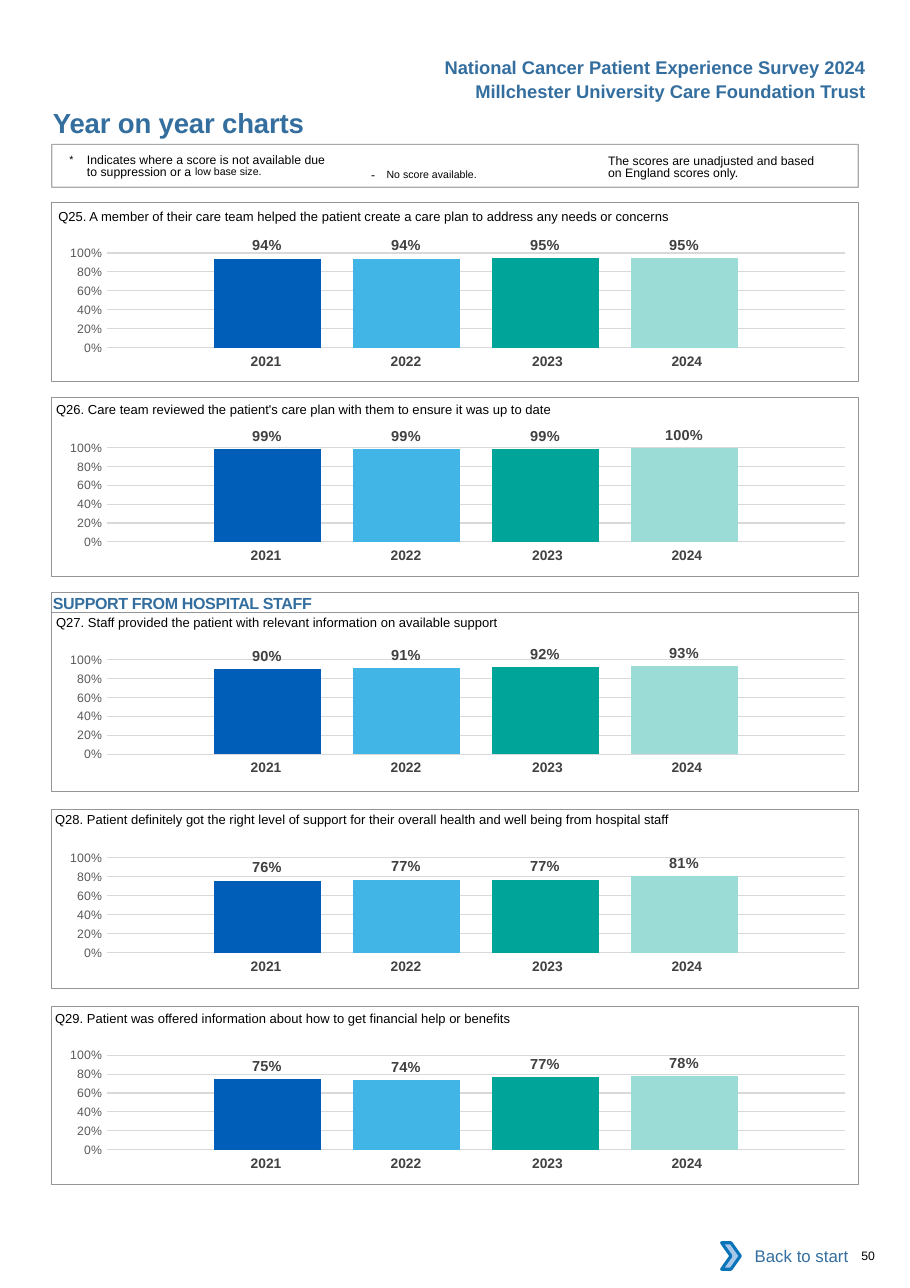
from dataclasses import dataclass

import pptx
import pptx.chart.data
import pptx.dml.color
import pptx.enum.chart
import pptx.enum.shapes
import pptx.enum.text
import pptx.util
from lxml import etree
from pptx.oxml import parse_xml
from pptx.oxml.ns import nsdecls, qn
from pptx.util import Inches

ALIGN = pptx.enum.text.PP_ALIGN
ANCHOR = pptx.enum.text.MSO_ANCHOR
SHAPE = pptx.enum.shapes.MSO_SHAPE


@dataclass(frozen=True)
class Theme:
    font: str = "Arial"
    chart_font: str = "Calibri"
    blue: str = "336E9F"
    black: str = "000000"
    white: str = "FFFFFF"
    border: str = "939598"
    grid: str = "D9D9D9"
    axis: str = "595959"
    label: str = "404040"
    year: str = "414042"
    chevron_fill: str = "A8C7E9"
    chevron_line: str = "0A74BB"
    bars: tuple = ("005EB8", "41B6E6", "00A499", "9CDCD7")
    title_size: float = 18
    header_size: float = 12
    section_size: float = 10.5
    question_size: float = 8.5
    note_size: float = 8
    raised_size: float = 12
    axis_size: float = 8
    label_size: float = 9.5
    year_size: float = 9
    link_size: float = 11


T = Theme()
YEARS = ("2021", "2022", "2023", "2024")
PANEL_LEFT, PANEL_WIDTH, PANEL_HEIGHT = 0.47, 7.32, 1.62

# Question, its left and top, panel top, chart top, yearly scores
QUESTIONS = [
    ("Q25. A member of their care team helped the patient create a care plan "
     "to address any needs or concerns",
     0.53, 1.8, 1.84, 2.11, (0.94, 0.94, 0.95, 0.95)),
    ("Q26. Care team reviewed the patient's care plan with them to ensure it was up to date",
     0.51, 3.55, 3.61, 3.87, (0.99, 0.99, 0.99, 1)),
    ("Q27. Staff provided the patient with relevant information on available support",
     0.51, 5.49, 5.56, 5.8, (0.9, 0.91, 0.92, 0.93)),
    ("Q28. Patient definitely got the right level of support for their overall health "
     "and well being from hospital staff",
     0.5, 7.28, 7.35, 7.6, (0.76, 0.77, 0.77, 0.81)),
    ("Q29. Patient was offered information about how to get financial help or benefits",
     0.5, 9.08, 9.13, 9.39, (0.75, 0.74, 0.77, 0.78)),
]


def rgb(value):
    return pptx.dml.color.RGBColor.from_string(value)


def style_font(font, size, color, bold=False, name=T.font):
    font.name, font.size, font.bold = name, pptx.util.Pt(size), bold
    font.color.rgb = rgb(color)


def add_run(p, text, size, color=T.black, bold=False, spacing=0, raised=0):
    r = p.add_run()
    r.text = text
    style_font(r.font, size, color, bold)
    if spacing:
        r.font._element.set("spc", str(round(spacing * 100)))
    if raised:
        r.font._element.set("baseline", str(raised * 1000))


def set_frame(tf, insets=(0, 0, 0, 0), align=ALIGN.LEFT, anchor=ANCHOR.TOP):
    tf.word_wrap = True
    tf.auto_size = pptx.enum.text.MSO_AUTO_SIZE.NONE
    tf.vertical_anchor = anchor
    tf.margin_left, tf.margin_top, tf.margin_right, tf.margin_bottom = map(Inches, insets)
    p = tf.paragraphs[0]
    p.alignment = align
    return p


def add_text(s, box, runs, insets=(0, 0, 0, 0), align=ALIGN.LEFT):
    """Each run is (text, size) or (text, size, color, bold, spacing, raised)."""
    sp = s.shapes.add_textbox(*map(Inches, box))
    p = set_frame(sp.text_frame, insets, align)
    for run in runs:
        add_run(p, *run)
    return p


def add_box(s, kind, box, fill=None, line=None, weight=0.5):
    sp = s.shapes.add_shape(kind, *map(Inches, box))
    sp.shadow.inherit = False
    if fill:
        sp.fill.solid()
        sp.fill.fore_color.rgb = rgb(fill)
    else:
        sp.fill.background()
    if line:
        sp.line.color.rgb = rgb(line)
        sp.line.width = pptx.util.Pt(weight)
    else:
        sp.line.fill.background()
    return sp


def add_panel(s, top, height, weight=0.5):
    return add_box(s, SHAPE.RECTANGLE, (PANEL_LEFT, top, PANEL_WIDTH, height),
                   line=T.border, weight=weight)


def add_score_chart(s, top, scores):
    data = pptx.chart.data.CategoryChartData(number_format="0%")
    data.categories = ["1"]
    for i, score in enumerate(scores, 1):
        data.add_series(f"Series {i}", [score])
    chart = s.shapes.add_chart(
        pptx.enum.chart.XL_CHART_TYPE.COLUMN_CLUSTERED,
        *map(Inches, (0.39, top, 7.32, 1.29)), data).chart
    style_font(chart.font, 10, T.black, name=T.chart_font)
    chart.has_legend = chart.has_title = False
    chart.category_axis.visible = False

    axis = chart.value_axis
    axis.minimum_scale, axis.maximum_scale, axis.major_unit = 0, 1, 0.2
    axis.major_tick_mark = pptx.enum.chart.XL_TICK_MARK.NONE
    axis.format.line.fill.background()
    axis.major_gridlines.format.line.color.rgb = rgb(T.grid)
    axis.major_gridlines.format.line.width = pptx.util.Pt(0.75)
    axis.tick_labels.number_format = "0%"
    axis.tick_labels.number_format_is_linked = False
    style_font(axis.tick_labels.font, T.axis_size, T.axis)

    plot = chart.plots[0]
    plot.gap_width, plot.overlap, plot.vary_by_categories = 200, -30, False
    for series, color in zip(plot.series, T.bars):
        series.format.fill.solid()
        series.format.fill.fore_color.rgb = rgb(color)
        labels = series.data_labels
        labels.show_value = True
        labels.position = pptx.enum.chart.XL_LABEL_POSITION.OUTSIDE_END
        labels.number_format, labels.number_format_is_linked = "0%", False
        style_font(labels.font, T.label_size, T.label, True)

    # Fixed inner plot area, as fractions of the chart
    area = chart._chartSpace.chart.plotArea
    for old in area.findall(qn("c:layout")):
        area.remove(old)
    parts = [("layoutTarget", "inner"), ("xMode", "edge"), ("yMode", "edge"),
             ("x", 0.079), ("y", 0.145), ("w", 0.915), ("h", 0.666)]
    inner = "".join(f'<c:{tag} val="{val}"/>' for tag, val in parts)
    area.insert(0, parse_xml(f'<c:layout {nsdecls("c")}><c:manualLayout>{inner}'
                             '</c:manualLayout></c:layout>'))


def add_year_row(s, top):
    table = s.shapes.add_table(1, 4, *map(Inches, (1.73, top, 5.15, 0.27))).table
    table.first_row = table.horz_banding = False
    table._tbl.tblPr[0].text = "{2D5ABB26-0587-4C30-8999-92F81FD0307C}"
    for i, (year, width, right) in enumerate(
            zip(YEARS, (1.27, 1.27, 1.34, 1.27), (0, 0, 0.04, 0.12))):
        table.columns[i].width = Inches(width)
        cell = table.cell(0, i)
        cell.fill.background()
        cell.margin_left, cell.margin_right = Inches(0.1), Inches(right)
        cell.margin_top = cell.margin_bottom = Inches(0.05)
        p = cell.text_frame.paragraphs[0]
        p.alignment = ALIGN.CENTER
        add_run(p, year, T.year_size, T.year, True)


def add_question(s, question, left, text_top, panel_top, chart_top, scores):
    add_score_chart(s, chart_top, scores)
    add_year_row(s, chart_top + 1.05)
    add_panel(s, panel_top, PANEL_HEIGHT)
    add_text(s, (left, text_top, 7.2, 0.24), [(question, T.question_size)], (0, 0.09, 0, 0))


def add_notes(s):
    n, raised = T.note_size, T.raised_size
    p = add_text(s, (0.63, 1.38, 2.4, 0.27), [
        ("*\t", raised, T.black, False, 0, 3),
        ("Indicates where a score is not available due to suppression or a ", n),
        ("low base size.", raised, T.black, False, 0, 7)], (0, 0.03, 0, 0))
    p.line_spacing = pptx.util.Pt(8.1)
    p._p.get_or_add_pPr().set("marL", str(Inches(0.16)))
    p._p.get_or_add_pPr().set("indent", str(-Inches(0.16)))
    add_text(s, (3.27, 1.41, 1.83, 0.24), [
        ("- ", n, T.black, False, 2.6),
        ("No score available.", raised, T.black, False, 0, 3)], (0.1, 0.05, 0.1, 0.05))
    p = add_text(s, (5.52, 1.38, 1.98, 0.27), [
        ("The scores are unadjusted and based on England scores only.", n)], (0, 0.03, 0, 0))
    p.line_spacing = pptx.util.Pt(8.1)
    sp = add_panel(s, 1.31, 0.39, 0.75)
    color = sp.line._ln.find(".//" + qn("a:srgbClr"))
    etree.SubElement(color, qn("a:alpha")).set("val", "80000")


def main():
    prs = pptx.Presentation()
    prs.slide_width, prs.slide_height = Inches(8.26), Inches(11.69)
    s = prs.slides.add_slide(prs.slide_layouts[5])

    # Header and title
    for top, line in ((0.46, "National Cancer Patient Experience Survey 2024"),
                      (0.68, "Millchester University Care Foundation Trust")):
        add_text(s, (3.5, top, 4.46, 0.3), [(line, T.header_size, T.blue, True)],
                 (0.1, 0.05, 0.1, 0.05), ALIGN.RIGHT)
    title = s.shapes.title
    title.left, title.top, title.width, title.height = map(Inches, (0.48, 0.96, 4.5, 0.3))
    add_run(set_frame(title.text_frame), "Year on year charts",
            T.title_size, T.blue, True, -0.1)
    add_notes(s)

    # Question panels and section heading
    for question in QUESTIONS:
        add_question(s, *question)
    sp = add_panel(s, 5.38, 0.18)
    add_run(set_frame(sp.text_frame, (0.01, 0.01, 0, 0)), "SUPPORT FROM HOSPITAL STAFF",
            T.section_size, T.blue, True, -0.2)

    # Footer
    sp = add_box(s, SHAPE.RECTANGLE, (6.62, 11.19, 1.18, 0.42), fill=T.white)
    p = set_frame(sp.text_frame, (0.1, 0.05, 0.1, 0.05), ALIGN.RIGHT, ANCHOR.MIDDLE)
    add_run(p, "Back to start", T.link_size, T.blue)
    add_box(s, SHAPE.CHEVRON, (6.55, 11.28, 0.17, 0.24), T.chevron_fill, T.chevron_line, 2)
    add_text(s, (7.72, 11.33, 0.51, 0.13), [("50", T.note_size)], (0.1, 0, 0, 0))

    prs.save("out.pptx")


if __name__ == "__main__":
    main()
